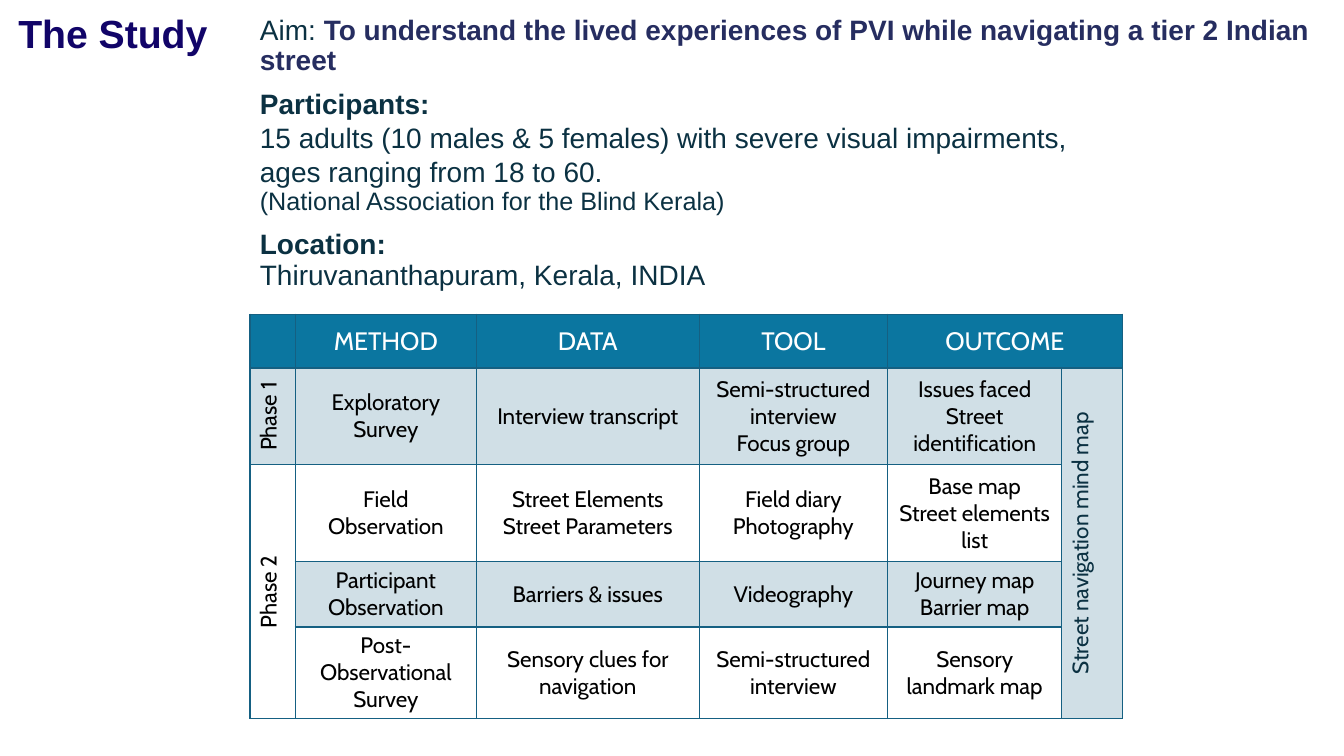
from lxml import etree
from pptx import Presentation
from pptx.dml.color import RGBColor
from pptx.enum.text import MSO_ANCHOR, MSO_AUTO_SIZE, PP_ALIGN
from pptx.oxml.ns import qn
from pptx.util import Cm, Pt

LEFT, CENTER = PP_ALIGN.LEFT, PP_ALIGN.CENTER
MIDDLE, BOTTOM = MSO_ANCHOR.MIDDLE, MSO_ANCHOR.BOTTOM
NO_FIT = MSO_AUTO_SIZE.NONE

COLORS = {
    "title": "110468",
    "aim": "262D60",
    "ink": "0B3142",
    "header": "0B76A0",
    "accent": "156082",
    "white": "FFFFFF",
    "black": "000000",
}


def add_run(paragraph, text, font_name, size, color, bold=False):
    run = paragraph.add_run()
    run.text = text
    run.font.name = font_name
    run.font.size = Pt(size)
    run.font.bold = bold
    run.font.color.rgb = RGBColor.from_string(COLORS[color])


def add_border(cell, side, width):
    line = etree.SubElement(cell._tc.get_or_add_tcPr(), qn(f"a:ln{side}"), w=str(Pt(width)))
    fill = etree.SubElement(line, qn("a:solidFill"))
    etree.SubElement(fill, qn("a:srgbClr"), val=COLORS["accent"])


prs = Presentation()
prs.slide_width, prs.slide_height = Cm(33.87), Cm(19.05)
slide = prs.slides.add_slide(prs.slide_layouts[5])

title = slide.shapes.title
title.left, title.top, title.width, title.height = Cm(0.33), Cm(0), Cm(7.26), Cm(1.57)
heading = title.text_frame
heading.auto_size = NO_FIT
heading.vertical_anchor = BOTTOM
heading.margin_left = heading.margin_right = Cm(0.13)
heading.margin_top = heading.margin_bottom = Cm(0.13)
heading.paragraphs[0].alignment = LEFT
heading.paragraphs[0].line_spacing = 0.89
add_run(heading.paragraphs[0], "The Study", "Arial", 28, "title", True)

summary = slide.shapes.add_textbox(Cm(6.3), Cm(0.28), Cm(28.7), Cm(7.87)).text_frame
summary.word_wrap = True
SUMMARY = [
    (0.9, [("Aim: ", 20, "ink", False),
           ("To understand the lived experiences of PVI while navigating a tier 2 Indian street",
            20, "aim", True)]),
    (0.9, [("Participants:", 20, "ink", True)]),
    (Pt(14), [("15 adults (10 males & 5 females) with severe visual impairments,", 20, "ink", False)]),
    (Pt(14), [("ages ranging from 18 to 60.", 20, "ink", False)]),
    (Pt(10), [("(National Association for the Blind Kerala)", 18, "ink", False)]),
    (0.9, [("Location:", 20, "ink", True)]),
    (Pt(12), [("Thiruvananthapuram, Kerala, INDIA", 20, "ink", False)]),
]
for index, (spacing, runs) in enumerate(SUMMARY):
    paragraph = summary.add_paragraph() if index else summary.paragraphs[0]
    paragraph.line_spacing = spacing
    paragraph.space_before = Pt(10 if index else 0)
    for text, size, color, bold in runs:
        add_run(paragraph, text, "Arial", size, color, bold)

COLUMN_WIDTHS = [1.14, 4.57, 5.61, 4.75, 4.39, 1.52]
ROW_HEIGHTS = [1.35, 2.44, 2.44, 1.65, 2.31]
PHASES = [
    ["", "METHOD", "DATA", "TOOL", "OUTCOME", ""],
    ["Phase 1", "Exploratory Survey", "Interview transcript",
     "Semi-structured interview\nFocus group", "Issues faced\nStreet identification",
     "Street navigation mind map"],
    ["Phase 2", "Field Observation", "Street Elements\nStreet Parameters",
     "Field diary\nPhotography", "Base map\nStreet elements\nlist", ""],
    ["", "Participant Observation", "Barriers & issues", "Videography",
     "Journey map\nBarrier map", ""],
    ["", "Post- Observational Survey", "Sensory clues for navigation",
     "Semi-structured interview", "Sensory landmark map", ""],
]
methods = slide.shapes.add_table(
    len(ROW_HEIGHTS), len(COLUMN_WIDTHS),
    Cm(6.3), Cm(7.92), Cm(sum(COLUMN_WIDTHS)), Cm(sum(ROW_HEIGHTS))).table
methods.first_row = methods.horz_banding = False
for column, width in zip(methods.columns, COLUMN_WIDTHS):
    column.width = Cm(width)
for row, height in zip(methods.rows, ROW_HEIGHTS):
    row.height = Cm(height)
methods.cell(0, 4).merge(methods.cell(0, 5))
methods.cell(1, 5).merge(methods.cell(4, 5))
methods.cell(2, 0).merge(methods.cell(4, 0))

for r, texts in enumerate(PHASES):
    for c, text in enumerate(texts):
        cell = methods.cell(r, c)
        is_header = r == 0
        is_side = not is_header and c in (0, 5)
        is_tinted = r in (1, 3) and not (r == 3 and c == 0) or r > 0 and c == 5
        cell.vertical_anchor = MIDDLE
        if is_side:
            cell._tc.get_or_add_tcPr().set("vert", "vert270")
        for side in "LRTB":
            thick = is_header and side == "B" or r == 1 and side == "T"
            add_border(cell, side, 2 if thick else 1)

        cell.fill.solid()
        fill_name = "header" if is_header else "accent" if is_tinted else "white"
        cell.fill.fore_color.rgb = RGBColor.from_string(COLORS[fill_name])
        if is_tinted:
            shade = cell._tc.tcPr.find(qn("a:solidFill")).find(qn("a:srgbClr"))
            etree.SubElement(shade, qn("a:alpha"), val="20000")

        if not text:
            continue
        color = "white" if is_header else "ink" if c == 5 else "black"
        for index, line in enumerate(text.split("\n")):
            frame = cell.text_frame
            paragraph = frame.add_paragraph() if index else frame.paragraphs[0]
            paragraph.alignment = CENTER
            add_run(paragraph, line, "Cabin", 18 if is_header else 16, color)

prs.save("out.pptx")
